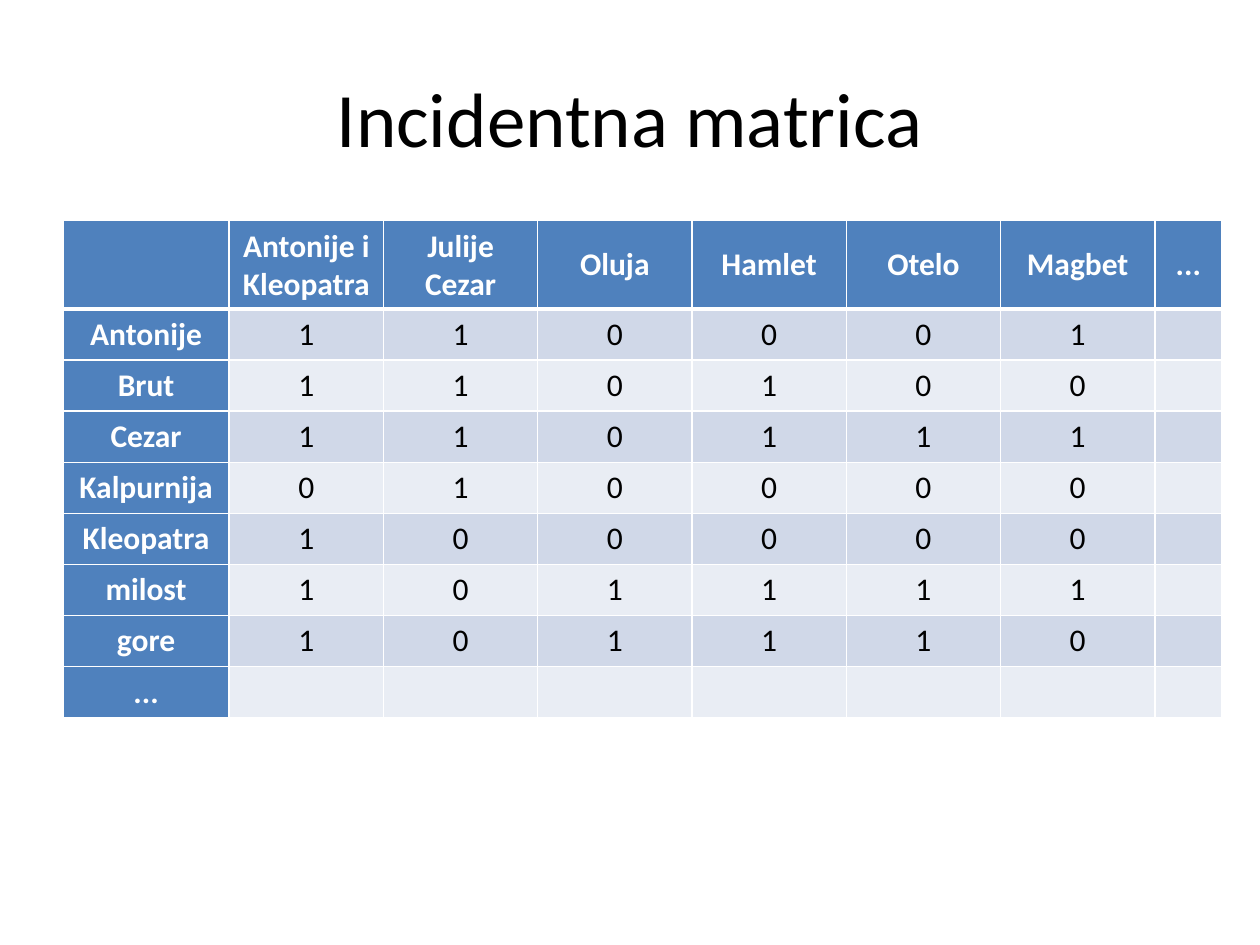
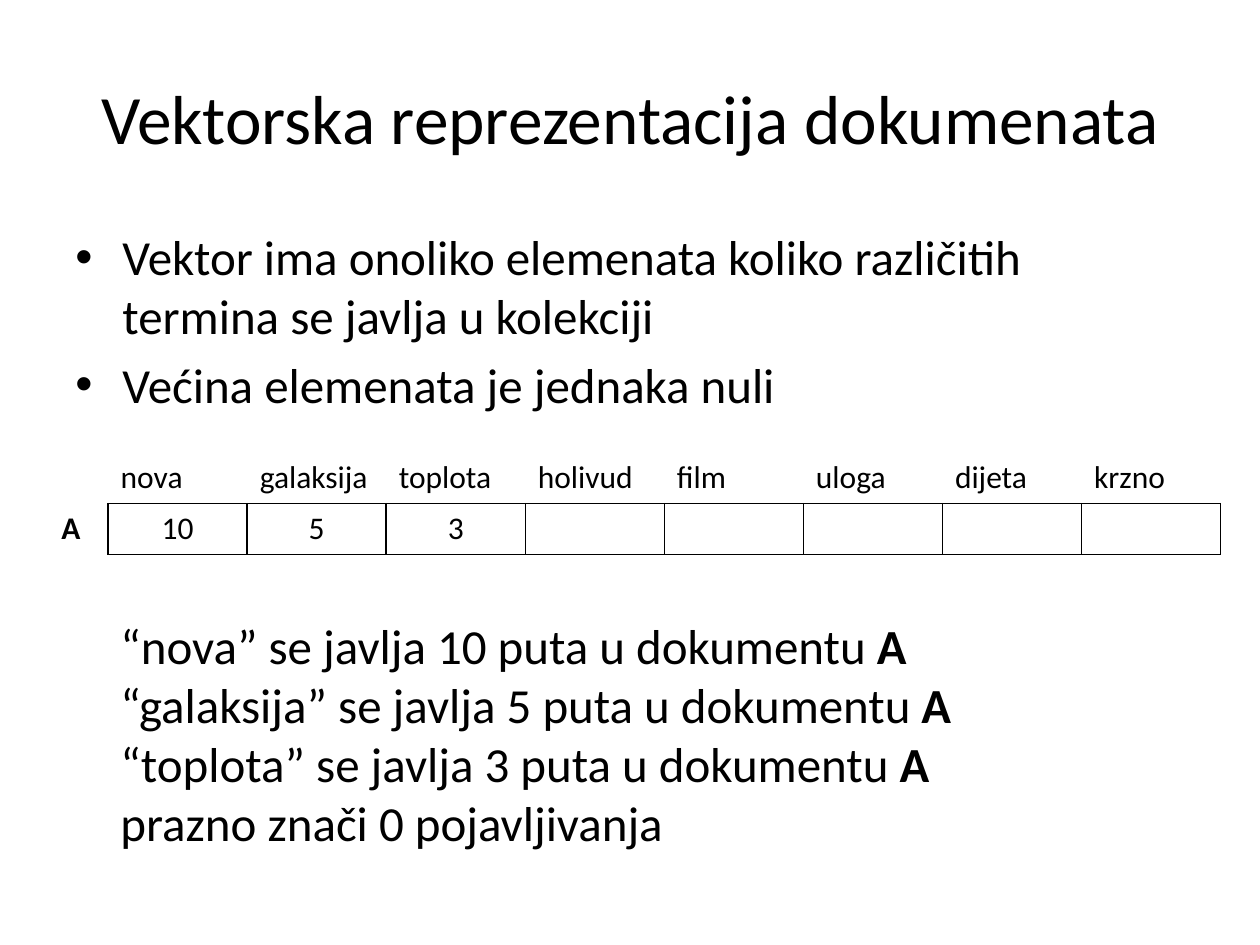
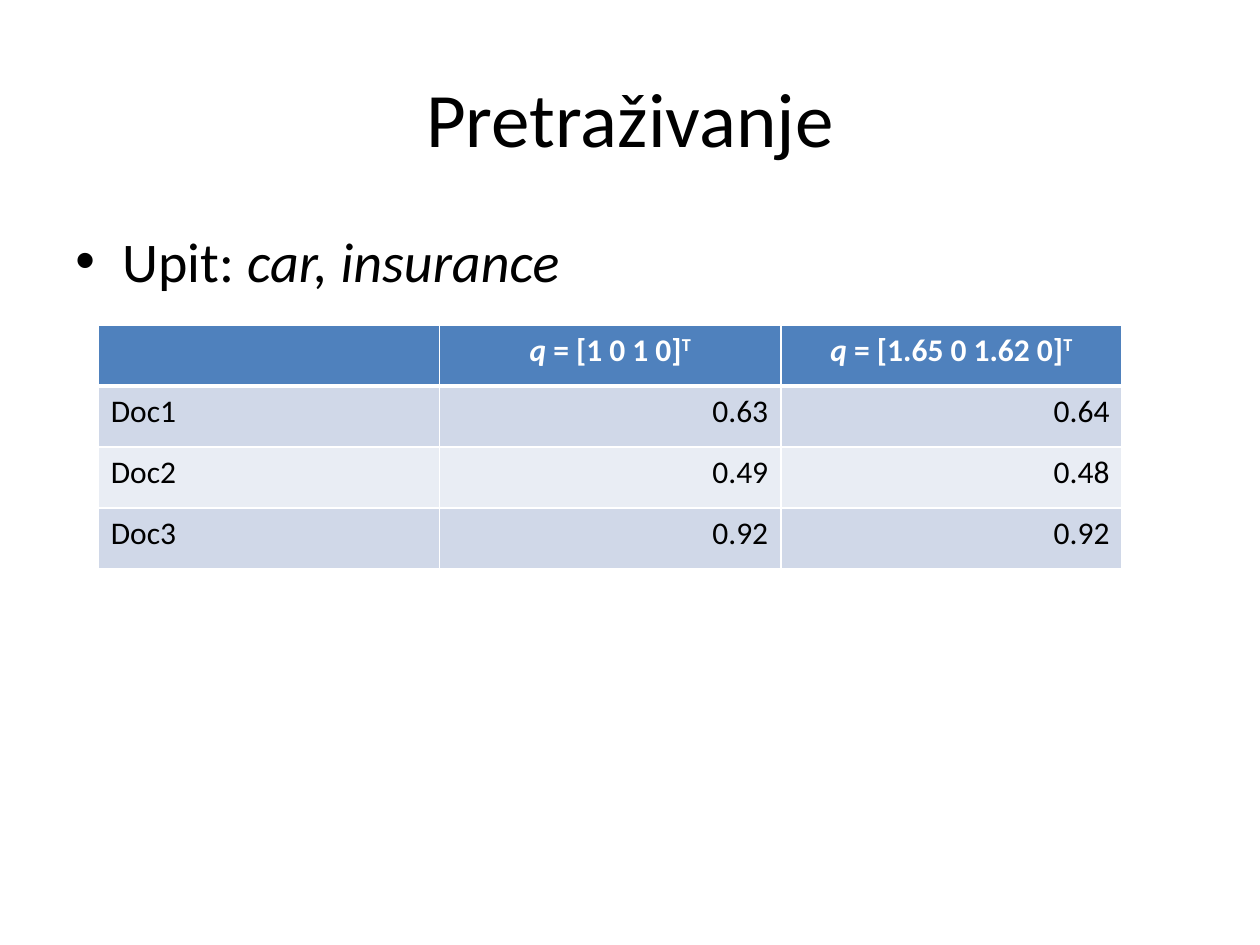
from dataclasses import dataclass

from lxml.etree import SubElement
from pptx import Presentation
from pptx.dml.color import RGBColor
from pptx.enum.text import MSO_ANCHOR as Anchor, MSO_AUTO_SIZE as AutoSize, PP_ALIGN as Align
from pptx.oxml.ns import qn
from pptx.util import Cm, Pt

FONT = "Calibri"
BLACK, WHITE, BLUE = "000000", "FFFFFF", "4F81BD"
BANDS = ("D0D8E8", "E9EDF4")
BOLD, ITALIC, PLAIN = {"bold": True}, {"italic": True}, {}
HEADER = {"bold": True, "color": WHITE}


@dataclass
class Box:
    """A rectangle on the slide, in centimetres."""
    left: float
    top: float
    width: float
    height: float

    def lengths(self):
        """Return the four sides as slide lengths."""
        return [Cm(side) for side in (self.left, self.top, self.width, self.height)]


TITLE_BOX = Box(1.27, 0.76, 22.86, 3.18)


def rgb(code):
    """Turn a hex string into a colour."""
    return RGBColor.from_string(code)


def set_all(target, values):
    """Set every attribute named in a dict."""
    for name, value in values.items():
        setattr(target, name, value)


def as_paragraphs(content):
    """Turn plain text into paragraphs of (text, format) runs."""
    if isinstance(content, str):
        return [[(line, PLAIN)] for line in content.split("\n")] if content else []
    return content


def write_text(frame, content, size, align=Align.LEFT, **base):
    """Fill a text frame and return its paragraphs."""
    for index, runs in enumerate(as_paragraphs(content)):
        paragraph = frame.add_paragraph() if index else frame.paragraphs[0]
        paragraph.alignment = align
        for text, changes in runs:
            values = {"name": FONT, "size": Pt(size), "color": BLACK, **base, **changes}
            run = paragraph.add_run()
            run.text = text
            run.font.color.rgb = rgb(values.pop("color"))
            baseline = values.pop("baseline", None)
            set_all(run.font, values)
            if baseline:
                run._r.get_or_add_rPr().set("baseline", str(baseline))
    return frame.paragraphs


def add_text(slide, box, content, size, frame_values, **base):
    """Add a text box and return its paragraphs."""
    frame = slide.shapes.add_textbox(*box.lengths()).text_frame
    set_all(frame, frame_values)
    return write_text(frame, content, size, **base)


def add_title(slide, text, size=44):
    """Add the centred slide title."""
    frame_values = {"word_wrap": True, "vertical_anchor": Anchor.MIDDLE}
    add_text(slide, TITLE_BOX, text, size, frame_values, align=Align.CENTER)


def add_bullets(slide, box, content, size):
    """Add a bulleted list with hanging indents."""
    for paragraph in add_text(slide, box, content, size, {"word_wrap": True}):
        paragraph.space_before = Pt(0.2 * size)
        properties = paragraph._p.get_or_add_pPr()
        properties.set("marL", str(Cm(0.95)))
        properties.set("indent", str(-Cm(0.95)))
        SubElement(properties, qn("a:buFont"), typeface="Arial")
        SubElement(properties, qn("a:buChar"), char="•")


def add_note(slide, box, content, size, **base):
    """Add unwrapped text that sizes its own box."""
    frame_values = {"word_wrap": False, "auto_size": AutoSize.SHAPE_TO_FIT_TEXT}
    add_text(slide, box, content, size, frame_values, **base)


def add_grid(slide, box, column_widths, row_heights):
    """Add an unbanded table with the given column widths and row heights."""
    table = slide.shapes.add_table(len(row_heights), len(column_widths), *box.lengths()).table
    set_all(table, {"first_row": False, "horz_banding": False})
    for column, width in zip(table.columns, column_widths):
        column.width = Cm(width)
    for row, height in zip(table.rows, row_heights):
        row.height = Cm(height)
    return table


def style_cell(cell, fill, color, widths):
    """Draw borders with widths for left, right, top, bottom, then fill the cell."""
    properties = cell._tc.get_or_add_tcPr()
    for side, width in zip("LRTB", widths):
        line = SubElement(properties, qn(f"a:ln{side}"), w=str(Pt(width)))
        if width:
            SubElement(SubElement(line, qn("a:solidFill")), qn("a:srgbClr"), val=color)
        else:
            SubElement(line, qn("a:noFill"))
    if fill:
        cell.fill.solid()
        cell.fill.fore_color.rgb = rgb(fill)
    else:
        cell.fill.background()


def add_banded_table(slide, box, rows, column_widths, header_height, value_align,
                     label_align=Align.CENTER, label_header=False, anchor=Anchor.TOP):
    """Add a table with a blue header row and alternating bands."""
    body_height = (box.height - header_height) / (len(rows) - 1)
    heights = [header_height] + [body_height] * (len(rows) - 1)
    table = add_grid(slide, box, column_widths, heights)
    table.first_row = True
    for i, row in enumerate(rows):
        for j, content in enumerate(row):
            cell = table.cell(i, j)
            is_header = i == 0 or (j == 0 and label_header)
            fill = BLUE if is_header else BANDS[(i - 1) % 2]
            style_cell(cell, fill, WHITE, (1, 1, 3 if i == 1 else 1, 3 if i == 0 else 1))
            cell.vertical_anchor = anchor
            align = Align.CENTER if i == 0 else value_align if j else label_align
            write_text(cell.text_frame, content, 18, align, **(HEADER if is_header else PLAIN))


def add_vector(slide, box, name, terms, counts):
    """Add a named vector: terms above a row of framed counts."""
    label_width, row_height = 1.19, box.height / 2
    grid = Box(box.left + label_width, box.top, box.width - label_width, box.height)
    table = add_grid(slide, grid, [grid.width / len(terms)] * len(terms), [row_height] * 2)
    for j, (term, count) in enumerate(zip(terms, counts)):
        for i, (text, align, widths) in enumerate((
                (term, Align.LEFT, (0, 0, 0, 1)), (count, Align.CENTER, (1, 1, 1, 1)))):
            style_cell(table.cell(i, j), None, BLACK, widths)
            write_text(table.cell(i, j).text_frame, text, 18, align)
    label = Box(box.left, box.top + row_height - 0.04, 0.89, 1.02)
    add_note(slide, label, name, 18, **BOLD)


def matrix_slide(slide):
    """Build the term and play incidence matrix."""
    add_title(slide, "Incidentna matrica")
    plays = ["", "Antonije i\nKleopatra", "Julije\nCezar", "Oluja", "Hamlet", "Otelo", "Magbet", "..."]
    incidence = {
        "Antonije": "110001", "Brut": "110100", "Cezar": "110111", "Kalpurnija": "010000",
        "Kleopatra": "100000", "milost": "101111", "gore": "101110", "...": [""] * 6,
    }
    rows = [plays] + [[term, *values, ""] for term, values in incidence.items()]
    add_banded_table(slide, Box(1.27, 4.45, 23.36, 10.02), rows, [3.35] + [3.11] * 6 + [1.35], 1.78,
                     Align.CENTER, label_header=True, anchor=Anchor.MIDDLE)


def vector_slide(slide):
    """Build the vector representation of a document."""
    add_title(slide, "Vektorska reprezentacija dokumenata", 39.6)
    add_bullets(slide, Box(1.27, 4.45, 22.86, 3.89),
                "Vektor ima onoliko elemenata koliko različitih termina se javlja u kolekciji\n"
                "Većina elemenata je jednaka nuli", 28)
    terms = ["nova", "galaksija", "toplota", "holivud", "film", "uloga", "dijeta", "krzno"]
    counts = ["10", "5", "3"] + [""] * 5
    add_vector(slide, Box(0.99, 9.12, 23.62, 2.06), "A", terms, counts)
    notes = [[(f"“{term}” se javlja {count} puta u dokumentu ", PLAIN), ("A", BOLD)]
             for term, count in zip(terms, counts) if count]
    notes.append([("prazno znači 0 pojavljivanja", PLAIN)])
    add_note(slide, Box(2.18, 12.29, 17.81, 5.05), notes, 28)


def search_slide(slide):
    """Build the query results."""
    add_title(slide, "Pretraživanje")
    add_bullets(slide, Box(1.27, 4.45, 22.86, 3.68),
                [[("Upit: ", PLAIN), ("car, insurance", ITALIC)]], 32)
    queries = [[[("q ", ITALIC), (f"= [{vector}]", PLAIN), ("T", {"baseline": 30000})]]
               for vector in ("1 0 1 0", "1.65 0 1.62 0")]
    rows = [["", *queries], ["Doc1", "0.63", "0.64"], ["Doc2", "0.49", "0.48"], ["Doc3", "0.92", "0.92"]]
    add_banded_table(slide, Box(1.98, 6.55, 20.64, 4.92), rows, [6.88] * 3, 1.23,
                     Align.RIGHT, label_align=Align.LEFT)


def main():
    """Build and save the presentation."""
    presentation = Presentation()
    set_all(presentation, {"slide_width": Cm(25.4), "slide_height": Cm(19.05)})
    for build in (matrix_slide, vector_slide, search_slide):
        build(presentation.slides.add_slide(presentation.slide_layouts[6]))
    presentation.save("out.pptx")


if __name__ == "__main__":
    main()
